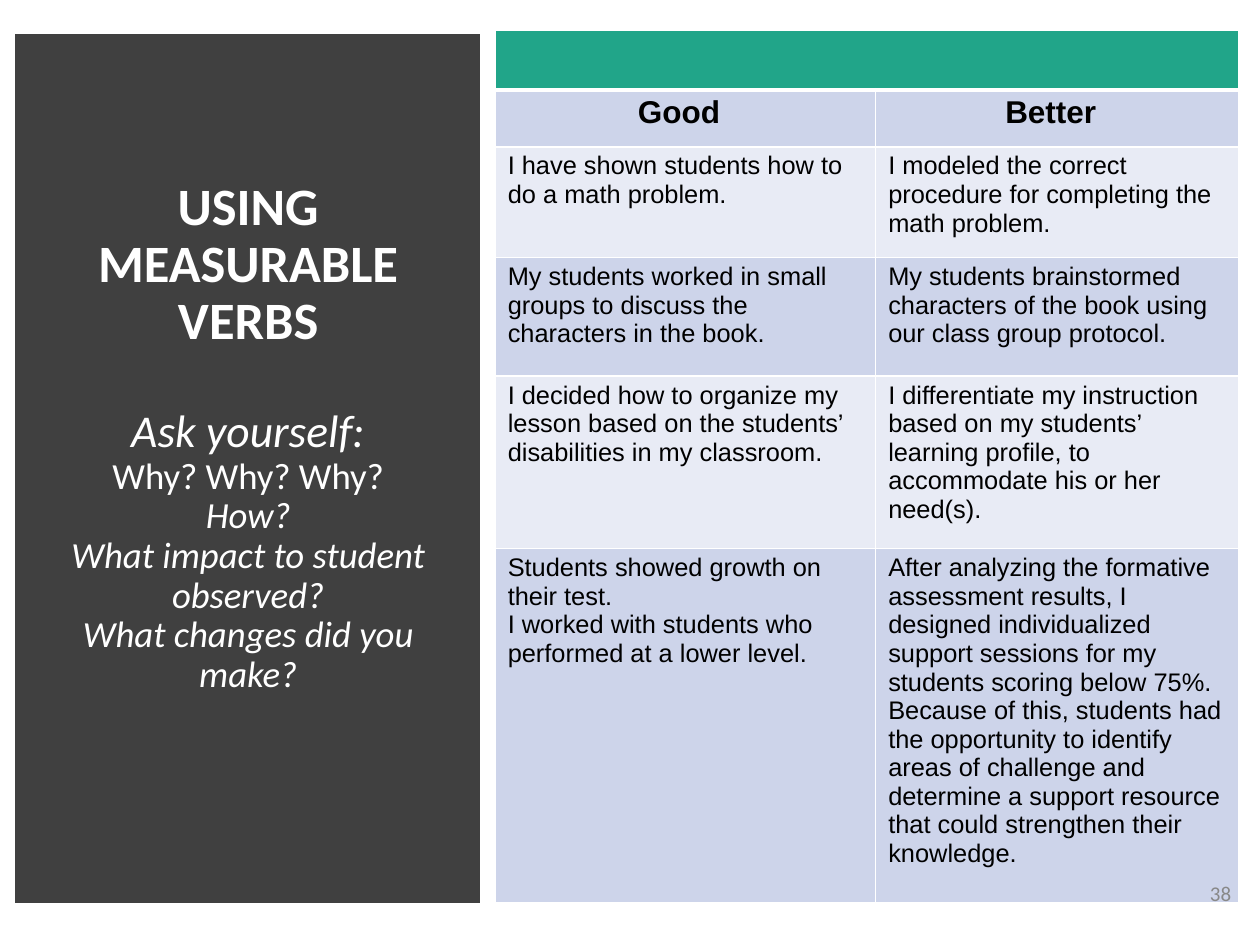
from lxml import etree
from pptx import Presentation
from pptx.dml.color import RGBColor
from pptx.enum.shapes import MSO_SHAPE
from pptx.enum.text import MSO_ANCHOR, MSO_AUTO_SIZE, PP_ALIGN
from pptx.oxml.ns import qn
from pptx.util import Inches, Pt

RECT = MSO_SHAPE.RECTANGLE
MIDDLE = MSO_ANCHOR.MIDDLE
NO_FIT = MSO_AUTO_SIZE.NONE
LEFT, CENTER, RIGHT = PP_ALIGN.LEFT, PP_ALIGN.CENTER, PP_ALIGN.RIGHT

COLORS = {
    "panel": "404040",
    "band": "21A589",
    "dark": "CDD4EA",
    "light": "E8EBF5",
    "white": "FFFFFF",
    "black": "000000",
    "gray": "888888",
}

TITLE = [
    ("USING MEASURABLE VERBS", 30, True, False, 0),
    ("Ask yourself:", 26, False, True, 33),
    ("Why? Why? Why?", 21, False, False, 0),
    ("How?", 21, False, True, 0),
    ("What impact to student observed?", 21, False, True, 0),
    ("What changes did you make?", 21, False, True, 0),
]

ROWS = [
    ("", ""),
    ("Good", "Better"),
    ("I have shown students how to do a math problem.",
     "I modeled the correct procedure for completing the math problem."),
    ("My students worked in small groups to discuss the characters in the book.",
     "My students brainstormed characters of the book using our class group protocol."),
    ("I decided how to organize my lesson based on the students’ disabilities in my classroom.",
     "I differentiate my instruction based on my students’ learning profile, "
     "to accommodate his or her need(s)."),
    ("Students showed growth on their test.\n"
     "I worked with students who performed at a lower level.",
     "After analyzing the formative assessment results, I designed individualized "
     "support sessions for my students scoring below 75%. Because of this, students "
     "had the opportunity to identify areas of challenge and determine a support "
     "resource that could strengthen their knowledge."),
]
WIDTHS = [3.02, 2.88]
HEIGHTS = [0.47, 0.45, 0.88, 0.94, 1.37, 2.81]


class Deck:
    def __init__(self):
        self.prs = Presentation()
        self.prs.slide_width = Inches(10)
        self.prs.slide_height = Inches(7.5)
        self.slide = self.prs.slides.add_slide(self.prs.slide_layouts[5])

    def color(self, name):
        return RGBColor.from_string(COLORS[name])

    def style(self, para, face, size, color, bold=False, slant=False, align=LEFT):
        para.alignment = align
        for run in para.runs:
            font = run.font
            font.name, font.size = face, Pt(size)
            font.bold, font.italic = bold, slant
            font.color.rgb = self.color(color)

    def inset(self, item, *sides):
        names = ("margin_left", "margin_top", "margin_right", "margin_bottom")
        for name, side in zip(names, sides):
            setattr(item, name, Inches(side))

    def panel(self, *box):
        shape = self.slide.shapes.add_shape(RECT, *map(Inches, box))
        shape.shadow.inherit = False
        shape.fill.solid()
        shape.fill.fore_color.rgb = self.color("panel")
        shape.line.color.rgb = self.color("panel")
        shape.line.width = Pt(10)
        line = shape.element.spPr.find(qn("a:ln"))
        etree.SubElement(line, qn("a:miter"), lim="800000")

    def title(self, lines, *box):
        shape = self.slide.shapes.title
        shape.left, shape.top, shape.width, shape.height = map(Inches, box)
        shape.element.getparent().append(shape.element)
        frame = shape.text_frame
        frame.word_wrap, frame.auto_size = True, NO_FIT
        frame.vertical_anchor = MIDDLE
        self.inset(frame, 0.07, 0.04, 0.07, 0.04)
        frame.text = "\n".join(line[0] for line in lines)
        for para, (_, size, bold, slant, gap) in zip(frame.paragraphs, lines):
            self.style(para, "Calibri", size, "white", bold, slant, CENTER)
            para.line_spacing = 0.9
            para.space_before = Pt(gap)

    def border(self, cell, top, bottom):
        props = cell._tc.get_or_add_tcPr()
        sides = {"lnL": 1, "lnR": 1, "lnT": top, "lnB": bottom}
        for spot, (tag, width) in enumerate(sides.items()):
            line = etree.Element(qn("a:" + tag), w=str(Pt(width)))
            fill = etree.SubElement(line, qn("a:solidFill"))
            etree.SubElement(fill, qn("a:srgbClr"), val=COLORS["white"])
            props.insert(spot, line)

    def cell(self, cell, text, row):
        head = row == 1
        cell.fill.solid()
        tint = "band" if row == 0 else "dark" if row % 2 else "light"
        if row > 1:
            tint = "light" if row % 2 == 0 else "dark"
        cell.fill.fore_color.rgb = self.color(tint)
        self.border(cell, 3 if head else 1, 3 if row == 0 else 1)
        self.inset(cell, 0 if head else 0.1, 0.04, 0.1, 0.13)
        if text:
            cell.text_frame.text = text
        for para in cell.text_frame.paragraphs:
            self.style(para, "Arial", 18 if head else 14.5, "black", head,
                       align=CENTER if head else LEFT)

    def table(self, rows, left, top):
        box = map(Inches, (left, top, sum(WIDTHS), sum(HEIGHTS)))
        table = self.slide.shapes.add_table(len(rows), len(WIDTHS), *box).table
        table.first_row = table.horz_banding = False
        for col, width in zip(table.columns, WIDTHS):
            col.width = Inches(width)
        for num, (texts, height) in enumerate(zip(rows, HEIGHTS)):
            table.rows[num].height = Inches(height)
            for col, text in enumerate(texts):
                self.cell(table.cell(num, col), text, num)
        table.cell(0, 0).merge(table.cell(0, 1))

    def number(self, text, *box):
        frame = self.slide.shapes.add_textbox(*map(Inches, box)).text_frame
        frame.word_wrap = True
        frame.vertical_anchor = MIDDLE
        frame.text = text
        self.style(frame.paragraphs[0], "Calibri", 12, "gray", align=RIGHT)


def main():
    deck = Deck()
    deck.panel(0.19, 0.34, 3.55, 6.76)
    deck.title(TITLE, 0.42, 0.59, 3.1, 5.77)
    deck.table(ROWS, 3.93, 0.24)
    deck.number("38", 9.27, 6.8, 0.6, 0.57)
    deck.prs.save("out.pptx")


if __name__ == "__main__":
    main()
